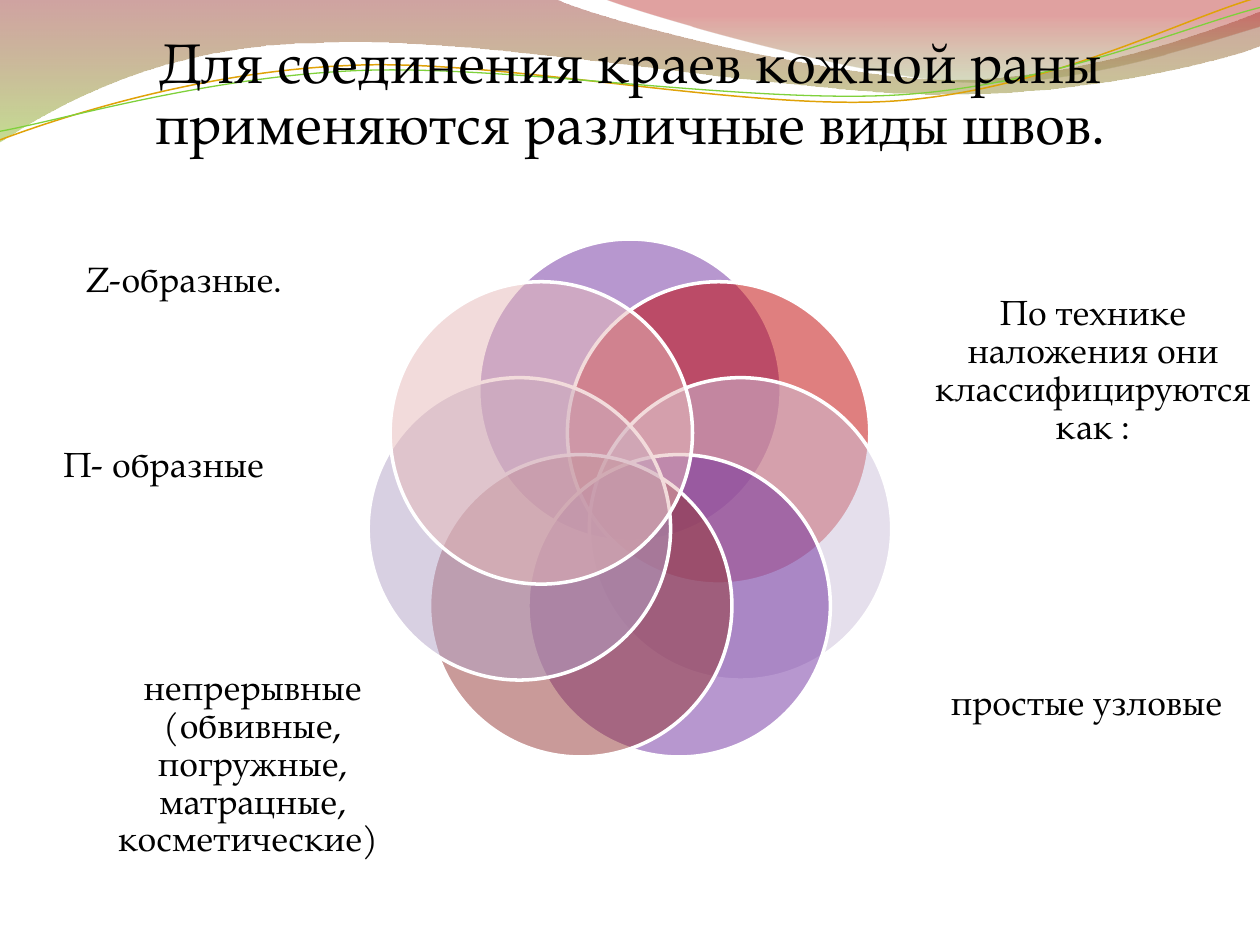
from collections import namedtuple
from dataclasses import dataclass
from math import cos, pi, sin

from lxml.etree import SubElement
from pptx import Presentation
from pptx.dml.color import RGBColor
from pptx.enum.shapes import MSO_SHAPE
from pptx.enum.text import MSO_ANCHOR, MSO_AUTO_SIZE, PP_ALIGN
from pptx.oxml.ns import qn
from pptx.util import Pt

Box = namedtuple("Box", "left top width height")


@dataclass(frozen=True)
class Theme:
    font: str = "TeX Gyre Pagella"
    title_size: float = 32
    label_size: float = 20
    text: str = "000000"
    outline: str = "FFFFFF"
    petals: tuple = ("7030A0", "C00000", "CCC1DA", "7030A0", "953735", "B3A2C7", "E6B9B8")
    petal_opacity: int = 50
    # gradient stops: position, colour, opacity
    wide_wave: tuple = ((0, "973330", 45), (1, "95C238", 55))
    right_wave: tuple = ((0, "769537", 30), (0.8, "BE3330", 45))
    orange: str = "E0A208"
    green: str = "7FD13B"


THEME = Theme()
TITLE = "Для соединения краев кожной раны применяются различные виды швов."
LABELS = (
    ("По технике наложения они классифицируются как :", Box(532.8, 149.8, 183.6, 124.6)),
    ("простые узловые", Box(522, 345.6, 198, 113.8)),
    ("непрерывные (обвивные, погружные, матрацные, косметические) ",
     Box(45.4, 380.2, 198, 113.8)),
    ("П- образные ", Box(4.3, 203.8, 183.6, 124.6)),
    ("Z-образные. ", Box(14.4, 102.2, 187.2, 116.6)),
)

# Outlines: a start point, then 2 numbers for a straight side or 6 for a curve.
WIDE_WAVE = (
    (0, 0), (317, -0.7),
    (343, 12, 478, 45.4, 546, 45.4), (614, 45.4, 690, 18.7, 720, 6.5),
    (720.7, 26),
    (708, 31.7, 626.4, 54.7, 537, 54), (448, 54, 275, 20.2, 185, 24.5),
    (93, 25.2, 33, 59.8, -0.7, 81.4),
)
RIGHT_WAVE = (
    (345, -0.7), (366.5, 7.9, 491, 44.6, 553.7, 46.8),
    (616.3, 49.7, 692, 23, 720, 15), (720, 0),
)
ORANGE_STRAND = (
    (0, 47.4), (35.2, 36.1, 115.5, 13.8, 201.2, 14.3),
    (286.3, 13.9, 427.3, 51.6, 513.9, 49.2), (600.5, 46.7, 677.9, 10.1, 721.6, 0),
)
GREEN_STRAND = (
    (0, 36.7), (34, 32.3, 119.3, 11.3, 205.2, 11.7),
    (291.7, 12.1, 430.2, 41.8, 516.6, 40.1), (602.6, 38.3, 679.5, 8.7, 722.5, 0),
)
STRAND_ROTATION = 357.3


def rgb(colour):
    return RGBColor.from_string(colour)


def in_points(box):
    return [Pt(value) for value in box]


def apply_format(target, values):
    for name, value in values.items():
        setattr(target, name, value)


def set_opacity(shape, *percents):
    """Give the shape's fill colours, in order, their opacity."""
    for colour, percent in zip(shape._element.spPr.iter(qn("a:srgbClr")), percents):
        SubElement(colour, qn("a:alpha")).set("val", str(percent * 1000))


def add_outline(slide, left, top, outline, close):
    """Build the outline with straight sides, then join each curve's three into one."""
    start, *rest = [(Pt(left + x), Pt(top + y))
                    for part in outline for x, y in zip(part[::2], part[1::2])]
    builder = slide.shapes.build_freeform(*start)
    builder.add_line_segments(rest, close=close)
    shape = builder.convert_to_shape()
    shape.shadow.inherit = False
    sides = iter(list(shape._element.iter(qn("a:lnTo"))))
    for part in outline[1:]:
        side = next(sides)
        if len(part) == 6:
            curve = side.makeelement(qn("a:cubicBezTo"))
            side.addprevious(curve)
            for corner in (side, next(sides), next(sides)):
                curve.append(corner[0])
                corner.getparent().remove(corner)
    return shape


def add_wave(slide, left, top, outline, stops, angle):
    wave = add_outline(slide, left, top, outline, close=True)
    wave.fill.gradient()
    wave.fill.gradient_angle = angle
    for stop, (position, colour, _) in zip(wave.fill.gradient_stops, stops):
        stop.position = position
        stop.color.rgb = rgb(colour)
    set_opacity(wave, *(opacity for _, _, opacity in stops))
    wave.line.fill.background()


def add_strand(slide, left, top, outline, colour, width):
    strand = add_outline(slide, left, top, outline, close=False)
    strand.rotation = STRAND_ROTATION
    strand.fill.background()
    strand.line.color.rgb = rgb(colour)
    strand.line.width = Pt(width)


def add_header(slide, box):
    add_wave(slide, box.left, box.top, WIDE_WAVE, THEME.wide_wave, 270)
    add_wave(slide, box.left, box.top, RIGHT_WAVE, THEME.right_wave, 90)
    add_strand(slide, box.left - 1.4, box.top + 15.6, ORANGE_STRAND, THEME.orange, 0.85)
    add_strand(slide, box.left - 1.1, box.top + 21.3, GREEN_STRAND, THEME.green, 0.75)


def write_text(shape, text, size):
    frame = shape.text_frame
    frame.text = text
    apply_format(frame, {
        "word_wrap": True, "auto_size": MSO_AUTO_SIZE.NONE,
        "vertical_anchor": MSO_ANCHOR.MIDDLE,
        "margin_left": 0, "margin_top": 0, "margin_right": 0, "margin_bottom": 0,
    })
    paragraph = frame.paragraphs[0]
    apply_format(paragraph, {"alignment": PP_ALIGN.CENTER, "line_spacing": 0.9})
    apply_format(paragraph.font, {"name": THEME.font, "size": Pt(size)})
    paragraph.font.color.rgb = rgb(THEME.text)


def place_title(slide, box):
    title = slide.shapes.title
    apply_format(title, dict(zip(Box._fields, in_points(box))))
    write_text(title, TITLE, THEME.title_size)
    title._element.getparent().append(title._element)  # in front of the header


def add_flower(slide, box):
    """Spread overlapping circles evenly around the centre of the box."""
    diameter, orbit = 172.8, 64.8
    centre_x, centre_y = box.left + box.width / 2, box.top + box.height / 2
    for index, colour in enumerate(THEME.petals):
        angle = 2 * pi * index / len(THEME.petals)
        petal_box = Box(centre_x + orbit * sin(angle) - diameter / 2,
                        centre_y - orbit * cos(angle) - diameter / 2,
                        diameter, diameter)
        petal = slide.shapes.add_shape(MSO_SHAPE.OVAL, *in_points(petal_box))
        petal.shadow.inherit = False
        petal.fill.solid()
        petal.fill.fore_color.rgb = rgb(colour)
        set_opacity(petal, THEME.petal_opacity)
        petal.line.color.rgb = rgb(THEME.outline)
        petal.line.width = Pt(2)


def add_labels(slide, box):
    for text, place in LABELS:
        place = place._replace(left=box.left + place.left, top=box.top + place.top)
        label = slide.shapes.add_textbox(*in_points(place))
        write_text(label, text, THEME.label_size)


def main():
    deck = Presentation()
    deck.slide_width, deck.slide_height = Pt(720), Pt(540)
    slide = deck.slides.add_slide(deck.slide_layouts[5])
    add_header(slide, Box(0, 0, 720, 82))
    place_title(slide, Box(11.5, -0.7, 697.7, 110.9))
    add_flower(slide, Box(208.8, 136.6, 302.4, 302.4))
    add_labels(slide, Box(0, 0, 720, 540))
    deck.save("out.pptx")


if __name__ == "__main__":
    main()
